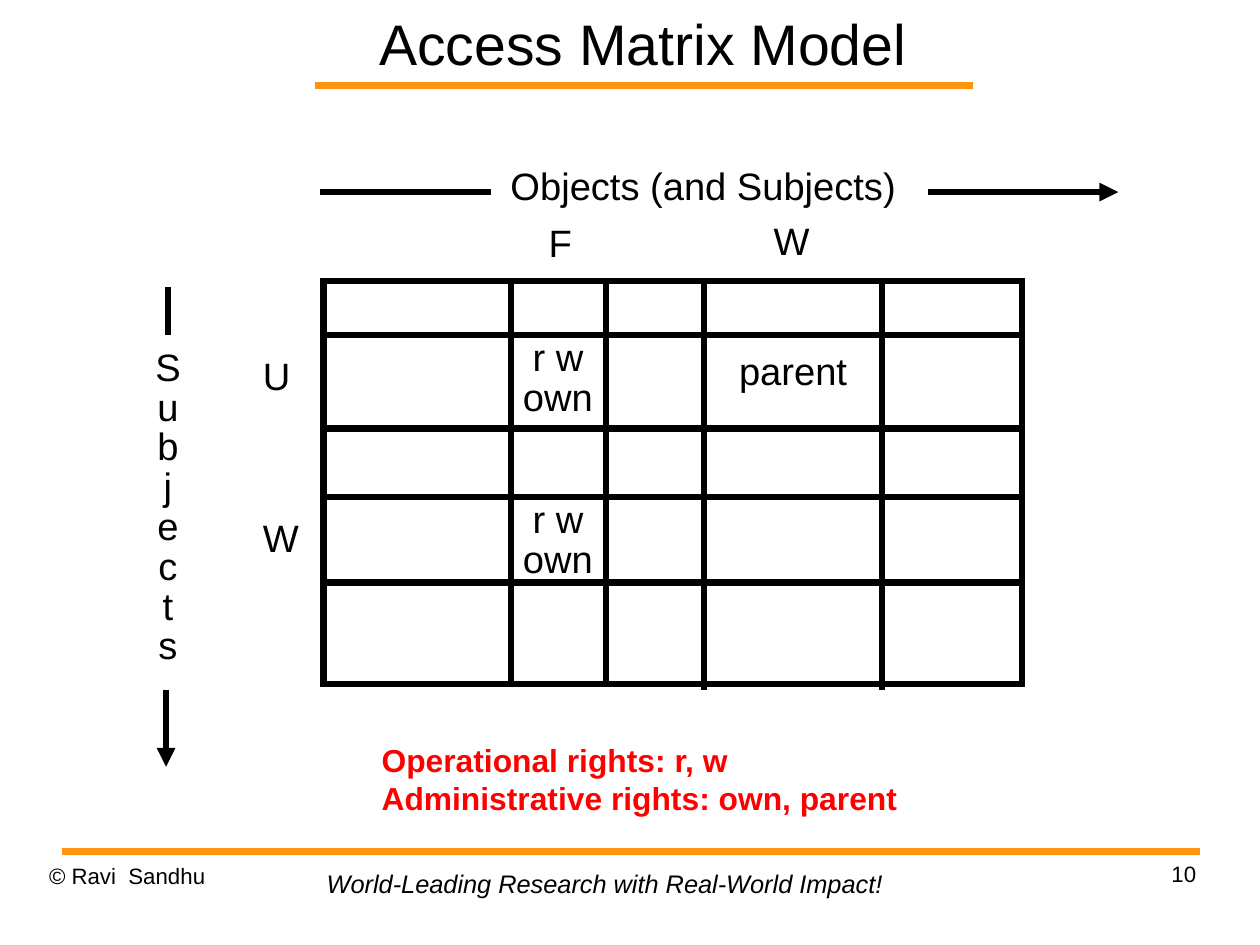
from lxml import etree
from pptx import Presentation
from pptx.dml.color import RGBColor
from pptx.enum.shapes import MSO_CONNECTOR, MSO_SHAPE
from pptx.enum.text import MSO_ANCHOR, MSO_AUTO_SIZE, PP_ALIGN
from pptx.oxml.ns import qn
from pptx.util import Pt

LEFT, CENTER, RIGHT = PP_ALIGN.LEFT, PP_ALIGN.CENTER, PP_ALIGN.RIGHT
TOP, MIDDLE = MSO_ANCHOR.TOP, MSO_ANCHOR.MIDDLE
FIT_SHAPE, NO_FIT = MSO_AUTO_SIZE.SHAPE_TO_FIT_TEXT, MSO_AUTO_SIZE.NONE
STRAIGHT, RECTANGLE = MSO_CONNECTOR.STRAIGHT, MSO_SHAPE.RECTANGLE

# Content: lines of text with left, top, width, height
TITLE = (["Access Matrix Model"], (173.5, 0, 463, 54))
COPYRIGHT = (["© Ravi  Sandhu"], (30.9, 543.3, 185, 41))
PAGE_NUMBER = (["10"], (568.6, 542, 185, 41))
MOTTO = (["World-Leading Research with Real-World Impact!"],
         (198.7, 543.6, 365.8, 26.6))
RIGHTS = (["Operational rights: r, w", "Administrative rights: own, parent"],
          (233.3, 462.8, 351.4, 55.4))
MATRIX_LABELS = [
    (["Objects (and Subjects)"], (316.6, 103.6, 270, 28.8)),
    (["F"], (340.6, 139.6, 24.5, 28.8)),
    (["W"], (482.4, 138.7, 32.4, 28.8)),
    (["U"], (160.6, 223.6, 27.4, 28.8)),
    (["W"], (160.6, 325.9, 32.4, 28.8)),
    (["parent"], (460.6, 220.7, 83.5, 28.8)),
]
STACKED_LABELS = [
    (["r w", "own"], (322.7, 211.6, 57.6, 54)),
    (["r w", "own"], (322.7, 313.6, 57.6, 54)),
    (list("Subjects"), (92.9, 217.8, 25.9, 203.8)),
]

# Lines: start x, start y, end x, end y
RULES = [(198.7, 54.1, 612.7, 54.1), (39.3, 536.2, 755.7, 536.2)]
AXIS_LINES = [(201.6, 121, 309.6, 121), (105.8, 180.9, 105.8, 211)]
AXIS_ARROWS = [(584.6, 121, 704.5, 121), (104.6, 434.9, 104.6, 483)]
MATRIX_FRAME = (203.8, 177, 439.9, 254)
ROW_SPAN = (201.6, 645.5)
ROW_EDGES = [211, 270, 313, 367]
COLUMN_HEIGHT = 257.8
COLUMN_EDGES = [(321.8, 175), (381.6, 175), (443.6, 177), (555.7, 177)]

THEME = {
    "font": "Arial",
    "black": RGBColor(0x00, 0x00, 0x00),
    "orange": RGBColor(0xFF, 0x95, 0x0E),
    "red": RGBColor(0xFF, 0x00, 0x00),
    "title": 36, "label": 24, "rights": 20, "motto": 16, "footer": 14,
    "line": 4, "rule": 4.31,
    "no_inset": (0, 0), "label_inset": (5, 2.4), "box_inset": (7.2, 3.6),
}

presentation = Presentation()
presentation.slide_width, presentation.slide_height = Pt(793.75), Pt(595.25)
slide = presentation.slides.add_slide(presentation.slide_layouts[6])


def add_text(content, size, inset="no_inset", align=LEFT, anchor=TOP,
             color="black", bold=False, italic=False, spacing=None,
             fit=False, wrap=True):
    lines, box = content
    frame = slide.shapes.add_textbox(*map(Pt, box)).text_frame
    horizontal, vertical = map(Pt, THEME[inset])
    frame.margin_left = frame.margin_right = horizontal
    frame.margin_top = frame.margin_bottom = vertical
    frame.word_wrap = wrap
    frame.auto_size = FIT_SHAPE if fit else NO_FIT
    frame.vertical_anchor = anchor
    frame.text = "\n".join(lines)
    for paragraph in frame.paragraphs:
        paragraph.alignment = align
        if spacing:
            paragraph.line_spacing = spacing
        font = paragraph.font
        font.name, font.size = THEME["font"], Pt(THEME[size])
        font.bold, font.italic = bold, italic
        font.color.rgb = THEME[color]


def style_outline(shape, color="black", width="line"):
    shape.line.color.rgb = THEME[color]
    shape.line.width = Pt(THEME[width])
    outline = shape._element.spPr.find(qn("a:ln"))
    etree.SubElement(outline, qn("a:miter"), lim="800000")
    return outline


def add_line(ends, color="black", width="line", arrow=False):
    connector = slide.shapes.add_connector(STRAIGHT, *map(Pt, ends))
    outline = style_outline(connector, color, width)
    if arrow:
        etree.SubElement(outline, qn("a:tailEnd"), type="triangle")
    etree.SubElement(connector._element.spPr, qn("a:effectLst"))


# Title and footer
for rule in RULES:
    add_line(rule, "orange", "rule")
add_text(COPYRIGHT, "footer", spacing=1.01)
add_text(PAGE_NUMBER, "footer", align=RIGHT, spacing=1.01)
add_text(MOTTO, "motto", "box_inset", italic=True, fit=True, wrap=False)
add_text(TITLE, "title", align=CENTER, anchor=MIDDLE)

# Matrix grid
matrix = slide.shapes.add_shape(RECTANGLE, *map(Pt, MATRIX_FRAME))
matrix.shadow.inherit = False
matrix.fill.background()
style_outline(matrix)
for y in ROW_EDGES:
    add_line((ROW_SPAN[0], y, ROW_SPAN[1], y))
for x, top in COLUMN_EDGES:
    add_line((x, top, x, top + COLUMN_HEIGHT))

# Axes
for axis in AXIS_LINES:
    add_line(axis)
for axis in AXIS_ARROWS:
    add_line(axis, arrow=True)

# Labels and matrix entries
for labels, alignment in ((MATRIX_LABELS, LEFT), (STACKED_LABELS, CENTER)):
    for label in labels:
        add_text(label, "label", "label_inset", alignment, spacing=0.87,
                 fit=True, wrap=False)

# Rights summary
add_text(RIGHTS, "rights", "box_inset", color="red", bold=True, fit=True)

presentation.save("out.pptx")
